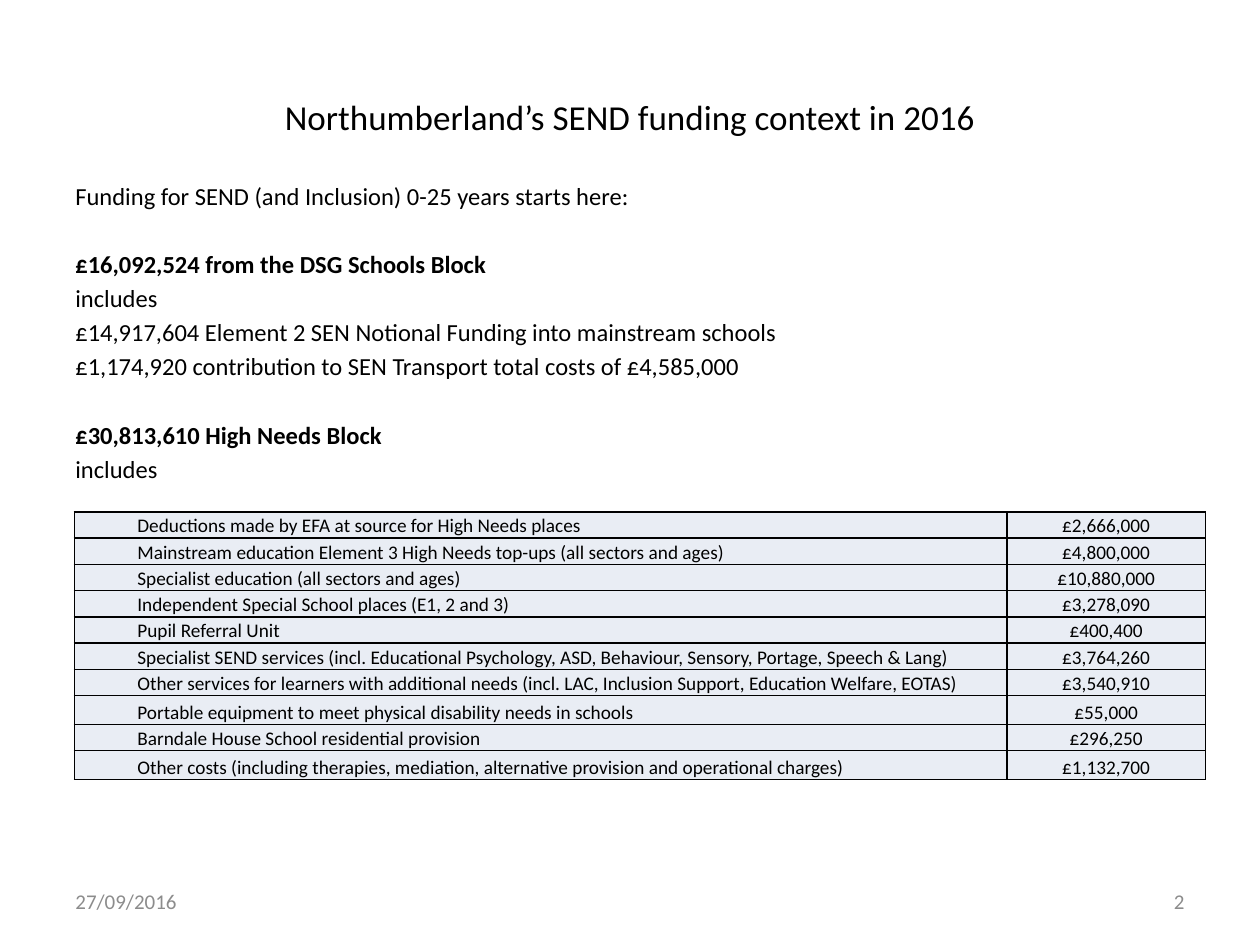
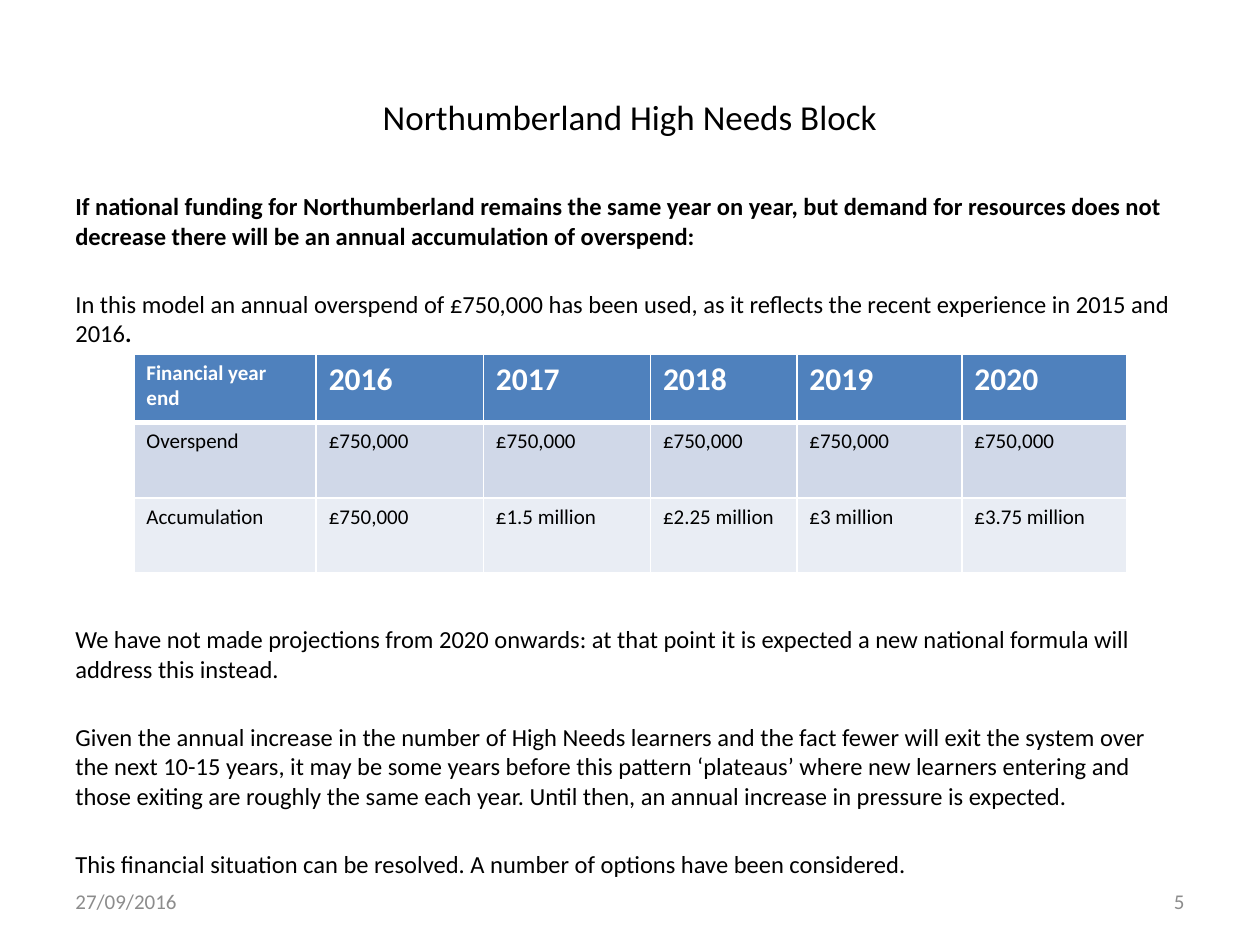
from lxml import etree
from pptx import Presentation
from pptx.dml.color import RGBColor
from pptx.enum.text import MSO_ANCHOR, PP_ALIGN
from pptx.oxml.ns import qn
from pptx.util import Pt

FONT = "Calibri"
BLACK, WHITE, GREY = "000000", "FFFFFF", "8C8C8C"
BLUE, MID_BLUE, PALE_BLUE = "4F81BD", "D0D8E8", "E9EDF4"
LEFT, WIDTH = 36, 648
CLOSE, GAP, TABLE_GAP = 2.6, 22.2, 158


def write(tf, paragraphs, size, color=BLACK, align=PP_ALIGN.LEFT, anchor=MSO_ANCHOR.TOP):
    tf.word_wrap = True
    tf.vertical_anchor = anchor
    for i, (before, runs) in enumerate(paragraphs):
        p = tf.paragraphs[0] if i == 0 else tf.add_paragraph()
        p.alignment = align
        p.space_before = Pt(before)
        for text, bold in runs:
            r = p.add_run()
            r.text = text
            r.font.name = FONT
            r.font.size = Pt(size)
            r.font.bold = bold
            r.font.color.rgb = RGBColor.from_string(color)


def paint(cell, fill, line, top=1, bottom=1):
    tcPr = cell._tc.get_or_add_tcPr()
    for side, width in (("L", 1), ("R", 1), ("T", top), ("B", bottom)):
        ln = etree.SubElement(tcPr, qn(f"a:ln{side}"), w=str(Pt(width)))
        etree.SubElement(etree.SubElement(ln, qn("a:solidFill")), qn("a:srgbClr"), val=line)
    cell.fill.solid()
    cell.fill.fore_color.rgb = RGBColor.from_string(fill)


funding_text = [
    (0, [("Funding for SEND (and Inclusion) 0-25 years starts here:", False)]),
    (GAP, [("£16,092,524 from the DSG Schools Block", True)]),
    (CLOSE, [("includes", False)]),
    (CLOSE, [("£14,917,604 Element 2 SEN Notional Funding into mainstream schools", False)]),
    (CLOSE, [("£1,174,920 contribution to SEN Transport total costs of £4,585,000", False)]),
    (GAP, [("£30,813,610 High Needs Block", True)]),
    (CLOSE, [("includes", False)]),
]
overspend_text = [
    (0, [("If national funding for Northumberland remains the same year on year, but demand for "
          "resources does not decrease there will be an annual accumulation of overspend:", True)]),
    (GAP, [("In this model an annual overspend of £750,000 has been used, as it reflects the "
            "recent experience in 2015 and 2016", False), (".", True)]),
    (TABLE_GAP, [("We have not made projections from 2020 onwards: at that point it is expected "
                  "a new national formula will address this instead.", False)]),
    (GAP, [("Given the annual increase in the number of High Needs learners and the fact fewer "
            "will exit the system over the next 10-15 years, it may be some years before this "
            "pattern ‘plateaus’ where new learners entering and those exiting are roughly the "
            "same each year. Until then, an annual increase in pressure is expected.", False)]),
    (GAP, [("This financial situation can be resolved. A number of options have been "
            "considered.", False)]),
]
costs = [
    ("Deductions made by EFA at source for High Needs places", "£2,666,000", 15),
    ("Mainstream education Element 3 High Needs top-ups (all sectors and ages)", "£4,800,000", 15),
    ("Specialist education (all sectors and ages)", "£10,880,000", 15),
    ("Independent Special School places (E1, 2 and 3)", "£3,278,090", 15),
    ("Pupil Referral Unit", "£400,400", 15),
    ("Specialist SEND services (incl. Educational Psychology, ASD, Behaviour, Sensory, Portage, "
     "Speech & Lang)", "£3,764,260", 15),
    ("Other services for learners with additional needs (incl. LAC, Inclusion Support, Education "
     "Welfare, EOTAS)", "£3,540,910", 15),
    ("Portable equipment to meet physical disability needs in schools", "£55,000", 16.5),
    ("Barndale House School residential provision", "£296,250", 15),
    ("Other costs (including therapies, mediation, alternative provision and operational "
     "charges)", "£1,132,700", 16.5),
]
projection = [
    ["Financial year end", "2016", "2017", "2018", "2019", "2020"],
    ["Overspend"] + ["£750,000"] * 5,
    ["Accumulation", "£750,000", "£1.5 million", "£2.25 million", "£3 million", "£3.75 million"],
]

prs = Presentation()
prs.slide_width, prs.slide_height = Pt(720), Pt(540)

slides = []
for title, body, body_top, number in (
    ("Northumberland’s SEND funding context in 2016", funding_text, 100, "2"),
    ("Northumberland High Needs Block", overspend_text, 105.8, "5"),
):
    s = prs.slides.add_slide(prs.slide_layouts[6])
    sp = s.shapes.add_textbox(Pt(LEFT), Pt(21.6), Pt(WIDTH), Pt(90))
    write(sp.text_frame, [(0, [(title, False)])], 20, align=PP_ALIGN.CENTER, anchor=MSO_ANCHOR.MIDDLE)
    sp = s.shapes.add_textbox(Pt(LEFT), Pt(body_top), Pt(WIDTH), Pt(482.4 - body_top))
    write(sp.text_frame, body, 14)
    for left, text, align in ((LEFT, "27/09/2016", PP_ALIGN.LEFT), (516, number, PP_ALIGN.RIGHT)):
        sp = s.shapes.add_textbox(Pt(left), Pt(500.5), Pt(168), Pt(28.75))
        write(sp.text_frame, [(0, [(text, False)])], 12, GREY, align, MSO_ANCHOR.MIDDLE)
    slides.append(s)

widths = [533, 113.3]
table = slides[0].shapes.add_table(
    len(costs), 2, Pt(42.5), Pt(292.5), Pt(sum(widths)), Pt(153)).table
for column, width in zip(table.columns, widths):
    column.width = Pt(width)
for row, (item, amount, height) in zip(table.rows, costs):
    row.height = Pt(height)
    for cell, text, indent, align in zip(
            row.cells, (item, amount), (36, 0), (PP_ALIGN.LEFT, PP_ALIGN.CENTER)):
        cell.margin_left = Pt(indent)
        cell.margin_right = cell.margin_top = cell.margin_bottom = 0
        cell.vertical_anchor = MSO_ANCHOR.BOTTOM
        write(cell.text_frame, [(0, [(text, False)])], 11, align=align, anchor=None)
        paint(cell, PALE_BLUE, BLACK)

widths = [104.2, 95.5, 95.5, 83.7, 94.3, 94.3]
heights = [39.4, 43, 43]
table = slides[1].shapes.add_table(
    3, 6, Pt(76.5), Pt(202.2), Pt(sum(widths)), Pt(sum(heights))).table
for column, width in zip(table.columns, widths):
    column.width = Pt(width)
for i, (row, values) in enumerate(zip(table.rows, projection)):
    row.height = Pt(heights[i])
    header = i == 0
    for j, (cell, text) in enumerate(zip(row.cells, values)):
        write(cell.text_frame, [(0, [(text, header)])], 18 if header and j else 12,
              WHITE if header else BLACK, anchor=None)
        paint(cell, (BLUE, MID_BLUE, PALE_BLUE)[i], WHITE,
              top=3 if i == 1 else 1, bottom=3 if header else 1)

prs.save("out.pptx")
